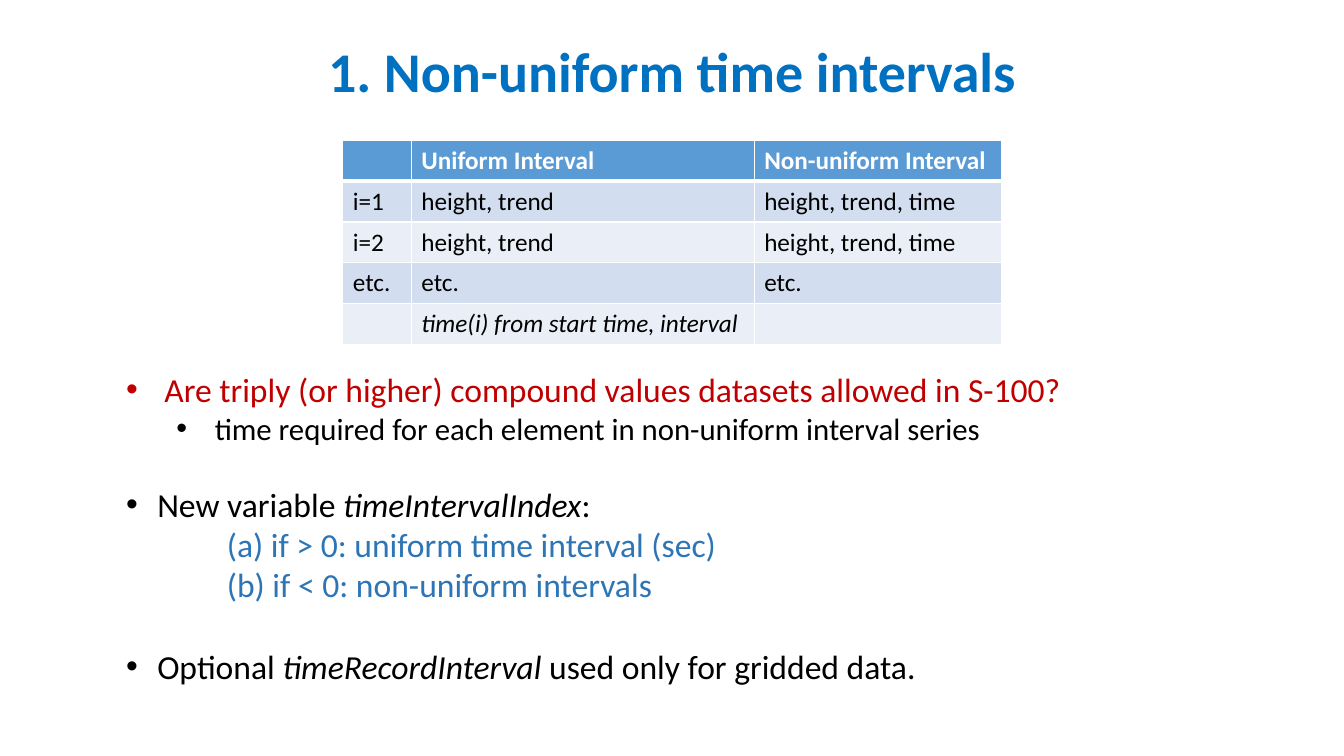
"""Slide on uniform and non-uniform time intervals."""
from dataclasses import dataclass

from lxml import etree
from pptx import Presentation
from pptx import util as u
from pptx.dml import color
from pptx.enum import text
from pptx.oxml import ns

FONT = "Calibri"
WIDE, HIGH = 133.3, 75
BLACK, WHITE, RED, BLUE = "000000", "FFFFFF", "C00000", "2E75B6"
HEAD, BANDS = "5B9BD5", ("D2DEEF", "EAEFF7")
COLS = (6.8, 34, 24.5)
ROW = 4.06


@dataclass
class Line:
    """One list line; runs alternate between upright and italic."""
    runs: tuple
    left: float
    hang: float = 0
    level: int = 0
    size: int = 24
    hue: str = BLACK
    gap: float = 0


LINES = (
    Line(("Are triply (or higher) compound values datasets allowed in S-100?",),
         3.8, 3.8, hue=RED),
    Line(("time required for each element in non-uniform interval series",),
         8.8, 3.8, level=1, size=22),
    Line(("New variable ", "timeIntervalIndex", ":"), 3.1, 3.1, gap=26.8),
    Line(("(a) if > 0: uniform time interval (sec)",), 10, hue=BLUE),
    Line(("(b) if < 0: non-uniform intervals",), 10, hue=BLUE),
    Line(("Optional ", "timeRecordInterval", " used only for gridded data."),
         3.1, 3.1, gap=29.3),
)

CELLS = (
    ("", "Uniform Interval", "Non-uniform Interval"),
    ("i=1", "height, trend", "height, trend, time"),
    ("i=2", "height, trend", "height, trend, time"),
    ("etc.", "etc.", "etc."),
    ("", "time(i) from start time, interval", ""),
)


def grid(n: float) -> u.Emu:
    """Turn grid steps, ten to the inch, into a length."""
    return u.Inches(n / 10)


def rgb(code: str) -> color.RGBColor:
    """Turn a hex string into a colour."""
    return color.RGBColor.from_string(code)


def write(para, words: str, size: float = 18, hue: str = BLACK,
          bold: bool = False, slant: bool = False) -> None:
    """Add a formatted run to a paragraph."""
    run = para.add_run()
    run.text = words
    font = run.font
    font.name, font.size, font.bold, font.italic = FONT, u.Pt(size), bold, slant
    font.color.rgb = rgb(hue)


def place(shape, left: float, top: float, wide: float, high: float) -> None:
    """Move and size a placeholder in grid steps."""
    shape.left, shape.top = grid(left), grid(top)
    shape.width, shape.height = grid(wide), grid(high)
    frame = shape.text_frame
    frame.word_wrap = True
    frame.auto_size = text.MSO_AUTO_SIZE.NONE


def add_title(shape) -> None:
    """Fill the title."""
    place(shape, 0, 1.7, WIDE, 11.4)
    shape.text_frame.vertical_anchor = text.MSO_ANCHOR.MIDDLE
    para = shape.text_frame.paragraphs[0]
    para.alignment = text.PP_ALIGN.CENTER
    para.line_spacing = 0.9
    write(para, "1. Non-uniform time intervals", size=40, hue="0070C0", bold=True)


def add_list(shape) -> None:
    """Fill the body with the list lines."""
    place(shape, 11.5, 36.1, 113, 32.6)
    frame = shape.text_frame
    frame.vertical_anchor = text.MSO_ANCHOR.TOP
    for i, line in enumerate(LINES):
        para = frame.add_paragraph() if i else frame.paragraphs[0]
        para.level = line.level
        para.space_before = u.Pt(line.gap)
        props = para._p.get_or_add_pPr()
        props.set("marL", str(grid(line.left)))
        props.set("indent", str(-grid(line.hang)))
        if line.hang:
            etree.SubElement(props, ns.qn("a:buFont")).set("typeface", "Arial")
            etree.SubElement(props, ns.qn("a:buChar")).set("char", "•")
        else:
            etree.SubElement(props, ns.qn("a:buNone"))
        for j, words in enumerate(line.runs):
            write(para, words, size=line.size, hue=line.hue, slant=j == 1)


def edge(cell, side: str, width: float) -> None:
    """Draw one white cell border."""
    line = etree.SubElement(cell._tc.get_or_add_tcPr(), ns.qn(f"a:ln{side}"))
    line.set("w", str(u.Pt(width)))
    fill = etree.SubElement(line, ns.qn("a:solidFill"))
    etree.SubElement(fill, ns.qn("a:srgbClr")).set("val", WHITE)


def add_grid(slide) -> None:
    """Draw the table of intervals."""
    count = len(CELLS)
    table = slide.shapes.add_table(count, len(COLS), grid(34), grid(13.9),
                                   grid(sum(COLS)), grid(ROW * count)).table
    for col, wide in zip(table.columns, COLS):
        col.width = grid(wide)
    for r, row in enumerate(CELLS):
        table.rows[r].height = grid(ROW)
        for c, words in enumerate(row):
            cell = table.cell(r, c)
            for side in "LRTB":
                thick = (r, side) in ((0, "B"), (1, "T"))
                edge(cell, side, 3 if thick else 1)
            cell.fill.solid()
            cell.fill.fore_color.rgb = rgb(BANDS[(r - 1) % 2] if r else HEAD)
            if words:
                write(cell.text_frame.paragraphs[0], words,
                      hue=BLACK if r else WHITE, bold=r == 0,
                      slant=r == count - 1)


def main() -> None:
    """Build and save the slide."""
    deck = Presentation()
    deck.slide_width, deck.slide_height = grid(WIDE), grid(HIGH)
    slide = deck.slides.add_slide(deck.slide_layouts[1])
    add_title(slide.shapes.title)
    add_list(slide.placeholders[1])
    add_grid(slide)
    deck.save("out.pptx")


if __name__ == "__main__":
    main()
